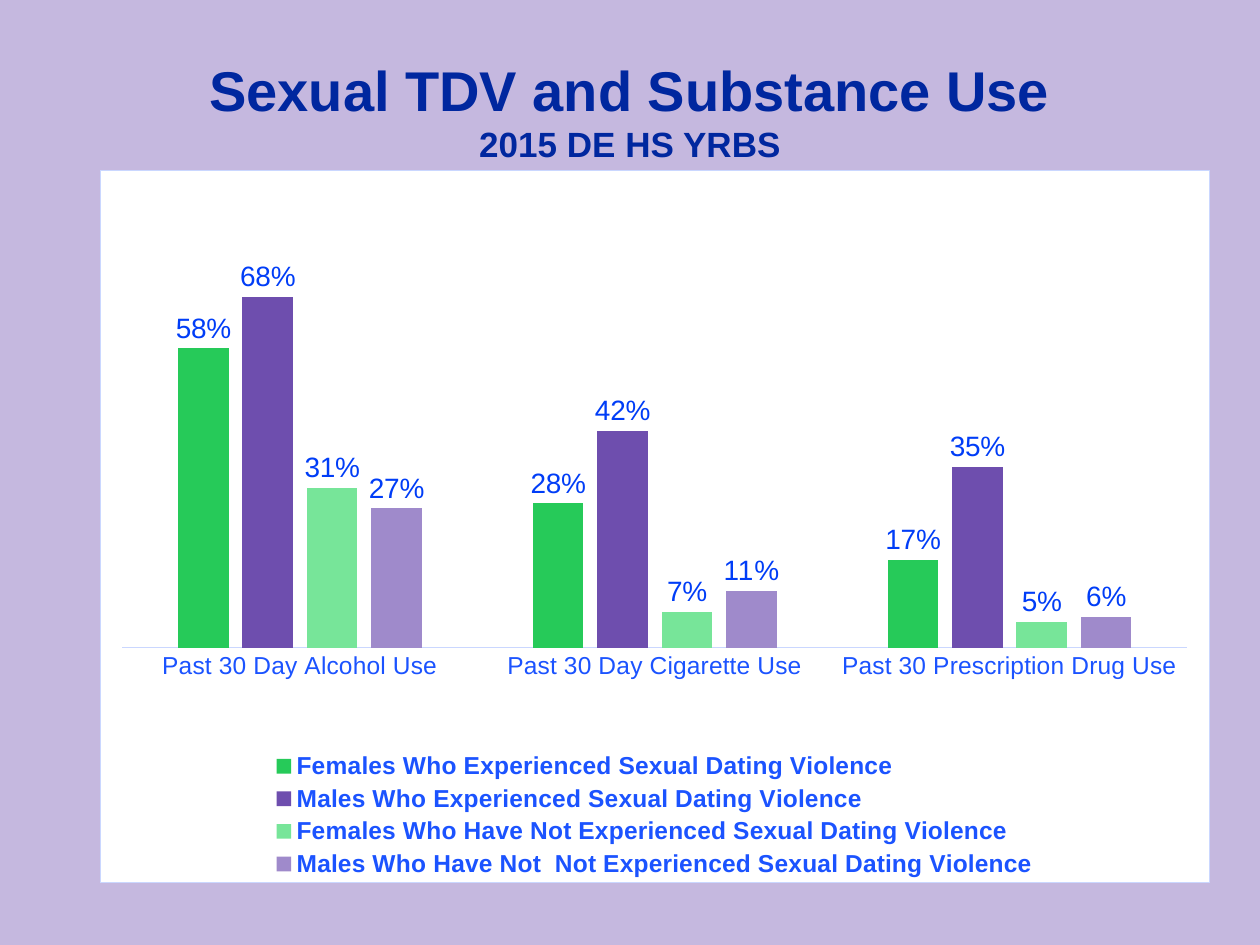
from lxml import etree
from pptx import Presentation
from pptx.chart.data import CategoryChartData
from pptx.dml.color import RGBColor
from pptx.enum.chart import (XL_CHART_TYPE, XL_LABEL_POSITION,
                             XL_LEGEND_POSITION, XL_TICK_MARK)
from pptx.enum.text import MSO_ANCHOR, PP_ALIGN
from pptx.oxml import parse_xml
from pptx.oxml.ns import nsdecls, qn
from pptx.util import Cm, Pt

COLUMN = XL_CHART_TYPE.COLUMN_CLUSTERED
OUTSIDE = XL_LABEL_POSITION.OUTSIDE_END
BOTTOM = XL_LEGEND_POSITION.BOTTOM
NO_TICK = XL_TICK_MARK.NONE
CENTER = PP_ALIGN.CENTER
MIDDLE = MSO_ANCHOR.MIDDLE

# Content
TITLE = [("Sexual TDV and Substance Use", 32), ("2015 DE HS YRBS", 20)]
USES = ["Past 30 Day Alcohol Use", "Past 30 Day Cigarette Use",
        "Past 30 Prescription Drug Use"]
GROUPS = [
    ("Females Who Experienced Sexual Dating Violence", (0.58, 0.28, 0.17), "female"),
    ("Males Who Experienced Sexual Dating Violence", (0.68, 0.42, 0.35), "male"),
    ("Females Who Have Not Experienced Sexual Dating Violence",
     (0.31, 0.07, 0.05), "female_not"),
    ("Males Who Have Not  Not Experienced Sexual Dating Violence",
     (0.27, 0.11, 0.06), "male_not"),
]
COLORS = {
    "back": "C5B8DF", "title": "00279F", "text": "1B53FF", "label": "003DF7",
    "line": "CAD7FF", "panel": "FFFFFF", "female": "26CA59",
    "male": "6E4EAE", "female_not": "77E599", "male_not": "9F8ACB",
}
FONT = "Arial"


def color(name):
    return RGBColor.from_string(COLORS[name])


def style(font, size, name, bold=False):
    font.name, font.size, font.bold = FONT, Pt(size), bold
    font.color.rgb = color(name)


def place(part, after, box, inner=False):
    """Give a chart part a fixed box, as shares of the chart's size."""
    old = part.find(qn("c:layout"))
    if old is not None:
        part.remove(old)
    layout = etree.Element(qn("c:layout"))
    manual = etree.SubElement(layout, qn("c:manualLayout"))
    items = [("layoutTarget", "inner")] if inner else []
    items += [("xMode", "edge"), ("yMode", "edge")]
    items += zip("xywh", map(str, box))
    for tag, val in items:
        etree.SubElement(manual, qn("c:" + tag)).set("val", val)
    part.insert(after, layout)


deck = Presentation()
deck.slide_width, deck.slide_height = Cm(25.4), Cm(19.05)
slide = deck.slides.add_slide(deck.slide_layouts[5])
slide.background.fill.solid()
slide.background.fill.fore_color.rgb = color("back")

# Title
title = slide.shapes.title
title.left, title.top, title.width, title.height = Cm(0), Cm(0.97), Cm(25.4), Cm(2.49)
frame = title.text_frame
frame.text = "\n".join(text for text, size in TITLE)
frame.vertical_anchor = MIDDLE
for para, (text, size) in zip(frame.paragraphs, TITLE):
    para.alignment = CENTER
    para.space_before = Pt(0)
    style(para.runs[0].font, size, "title", True)

# Chart
data = CategoryChartData(number_format="0%")
data.categories = USES
for name, vals, key in GROUPS:
    data.add_series(name, vals)
chart = slide.shapes.add_chart(COLUMN, Cm(2.01), Cm(3.43), Cm(22.38),
                               Cm(14.38), data).chart
chart.has_title = False
style(chart.font, 10, "title")
plot = chart.plots[0]
plot.gap_width, plot.overlap, plot.vary_by_categories = 219, -27, False

# Columns and their labels
for series, (name, vals, key) in zip(plot.series, GROUPS):
    series.format.fill.solid()
    series.format.fill.fore_color.rgb = color(key)
    labels = series.data_labels
    labels.show_value = True
    labels.position = OUTSIDE
    labels.number_format, labels.number_format_is_linked = "0%", False
    style(labels.font, 16, "label")

# Axes
axis = chart.category_axis
axis.major_tick_mark = axis.minor_tick_mark = NO_TICK
axis.format.line.color.rgb = color("line")
axis.format.line.width = Pt(0.75)
style(axis.tick_labels.font, 14, "text")
scale = chart.value_axis
scale.minimum_scale, scale.maximum_scale = 0, 0.8
scale.has_major_gridlines = False
scale.visible = False

# Legend
chart.has_legend = True
legend = chart.legend
legend.position = BOTTOM
legend.include_in_layout = False
style(legend.font, 14, "text", True)

# Part positions and white panel
space = chart.element
body = space.find(qn("c:chart"))
place(body.find(qn("c:plotArea")), 0, (0.02, 0.09, 0.96, 0.58), True)
place(body.find(qn("c:legend")), 1, (0.15, 0.81, 0.7, 0.19))
body.addnext(parse_xml(
    f'<c:spPr {nsdecls("c", "a")}>'
    f'<a:solidFill><a:srgbClr val="{COLORS["panel"]}"/></a:solidFill>'
    f'<a:ln w="{Pt(0.75)}"><a:solidFill><a:srgbClr val="{COLORS["line"]}"/>'
    '</a:solidFill></a:ln></c:spPr>'))

deck.save("out.pptx")
